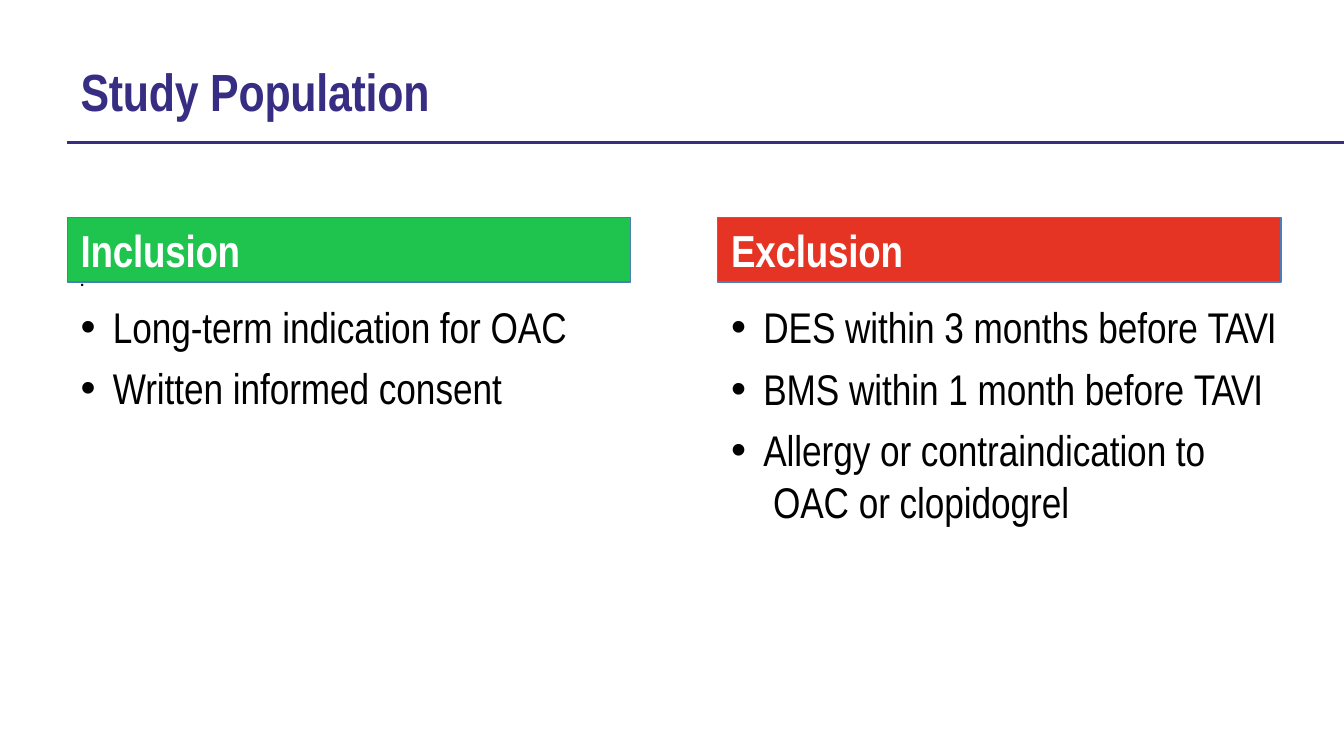
from dataclasses import dataclass

import pptx
import pptx.dml.color
import pptx.enum.shapes
import pptx.enum.text
import pptx.oxml
import pptx.oxml.ns
import pptx.util
from pptx.util import Inches

COLORS = {
    "title": "372D83",
    "inclusion": "1FC44F",
    "exclusion": "E53424",
    "border": "4A7EBB",
    "white": "FFFFFF",
    "black": "000000",
}
FONT = "Arial Narrow"
TIGHT = {"TAVI": -0.7}  # words with closer letter spacing
SLIDE_WIDTH = 10
SLIDE_HEIGHT = SLIDE_WIDTH * 9 / 16


@dataclass
class Column:
    heading: str
    color: str
    left: float
    list_top: float
    list_width: float
    list_height: float
    list_inset: float
    items: list[str]
    lead_dot: bool = False


COLUMNS = [
    Column("Inclusion", "inclusion", 0.5, 2.05, 3.67, 1.04, 0.03,
           ["Long-term indication for OAC", "Written informed consent"],
           lead_dot=True),
    Column("Exclusion", "exclusion", 5.34, 2.15, 4.14, 1.79, 0.09,
           ["DES within 3 months before TAVI",
            "BMS within 1 month before TAVI",
            "Allergy or contraindication to\v OAC or clopidogrel"]),
]


def rgb(name: str) -> pptx.dml.color.RGBColor:
    return pptx.dml.color.RGBColor.from_string(COLORS[name])


def set_frame(sp, top: float = 0, wrap: bool = True):
    """Set the insets of a shape's text frame and return the frame."""
    tf = sp.text_frame
    tf.word_wrap = wrap
    tf.vertical_anchor = pptx.enum.text.MSO_ANCHOR.TOP
    tf.margin_left = tf.margin_right = tf.margin_bottom = 0
    tf.margin_top = Inches(top)
    return tf


def add_text(tf, text: str, *, size: float, color: str = "black",
             font: str = FONT, bold: bool = False, spacing: float = -0.05,
             left: float = 0.01, before: float = 0, bullet: bool = False) -> None:
    """Write one paragraph, using the empty first one when there is one."""
    first = not tf.text
    p = tf.paragraphs[0] if first else tf.add_paragraph()
    p.alignment = pptx.enum.text.PP_ALIGN.LEFT
    if not first:
        p.space_before = pptx.util.Pt(before)
    pPr = p._p.get_or_add_pPr()
    pPr.set("marL", str(Inches(left)))
    pPr.set("indent", str(Inches(-0.24 if bullet else 0)))
    if bullet:
        ns = pptx.oxml.ns.nsdecls("a")
        pPr.append(pptx.oxml.parse_xml(f'<a:buFont {ns} typeface="Arial"/>'))
        pPr.append(pptx.oxml.parse_xml(f'<a:buChar {ns} char="•"/>'))

    # Split off a last word that has its own letter spacing
    head, _, last = text.rpartition(" ")
    parts = [head + " ", last] if last in TIGHT else [text]
    for part in parts:
        for i, line in enumerate(part.split("\v")):
            if i:
                p.add_line_break()
            r = p.add_run()
            r.text = line
            r.font.name = font
            r.font.size = pptx.util.Pt(size)
            r.font.bold = bold
            r.font.color.rgb = rgb(color)
            spc = TIGHT.get(line, spacing)
            r._r.get_or_add_rPr().set("spc", str(round(spc * 100)))


def add_box(s, left: float, top: float, width: float, height: float):
    return s.shapes.add_textbox(Inches(left), Inches(top), Inches(width), Inches(height))


def add_rule(s, left: float, right: float, top: float) -> None:
    line = s.shapes.add_connector(pptx.enum.shapes.MSO_CONNECTOR.STRAIGHT,
                                  Inches(left), Inches(top), Inches(right), Inches(top))
    line.line.color.rgb = rgb("title")
    line.line.width = pptx.util.Pt(2)
    line._element.spPr.append(
        pptx.oxml.parse_xml(f'<a:effectLst {pptx.oxml.ns.nsdecls("a")}/>'))


def add_column(s, col: Column) -> None:
    # Heading bar
    sp = s.shapes.add_shape(pptx.enum.shapes.MSO_SHAPE.RECTANGLE, Inches(col.left),
                            Inches(1.62), Inches(4.19), Inches(0.48))
    sp.shadow.inherit = False
    sp.fill.solid()
    sp.fill.fore_color.rgb = rgb(col.color)
    sp.line.color.rgb = rgb("border")
    sp.line.width = pptx.util.Pt(0.75)
    add_text(set_frame(sp, 0.04), col.heading, size=24, color="white", bold=True,
             spacing=-0.1, left=0.1)

    # Criteria list
    box = add_box(s, col.left + 0.08, col.list_top, col.list_width, col.list_height)
    tf = set_frame(box, col.list_inset)
    if col.lead_dot:
        add_text(tf, "•", size=5, font="Arial", spacing=0, left=0.02)
    for item in col.items:
        add_text(tf, item, size=23, left=0.26, before=5.3, bullet=True)


def main() -> None:
    prs = pptx.Presentation()
    prs.slide_width, prs.slide_height = Inches(SLIDE_WIDTH), Inches(SLIDE_HEIGHT)
    s = prs.slides.add_slide(prs.slide_layouts[6])

    # Title and rule
    add_rule(s, 0.5, SLIDE_WIDTH, 1.06)
    tf = set_frame(add_box(s, 0.59, 0.43, 2.65, 0.49), 0.01, wrap=False)
    add_text(tf, "Study Population", size=28, color="title", bold=True, spacing=-0.1)

    for col in COLUMNS:
        add_column(s, col)
    prs.save("out.pptx")


if __name__ == "__main__":
    main()
